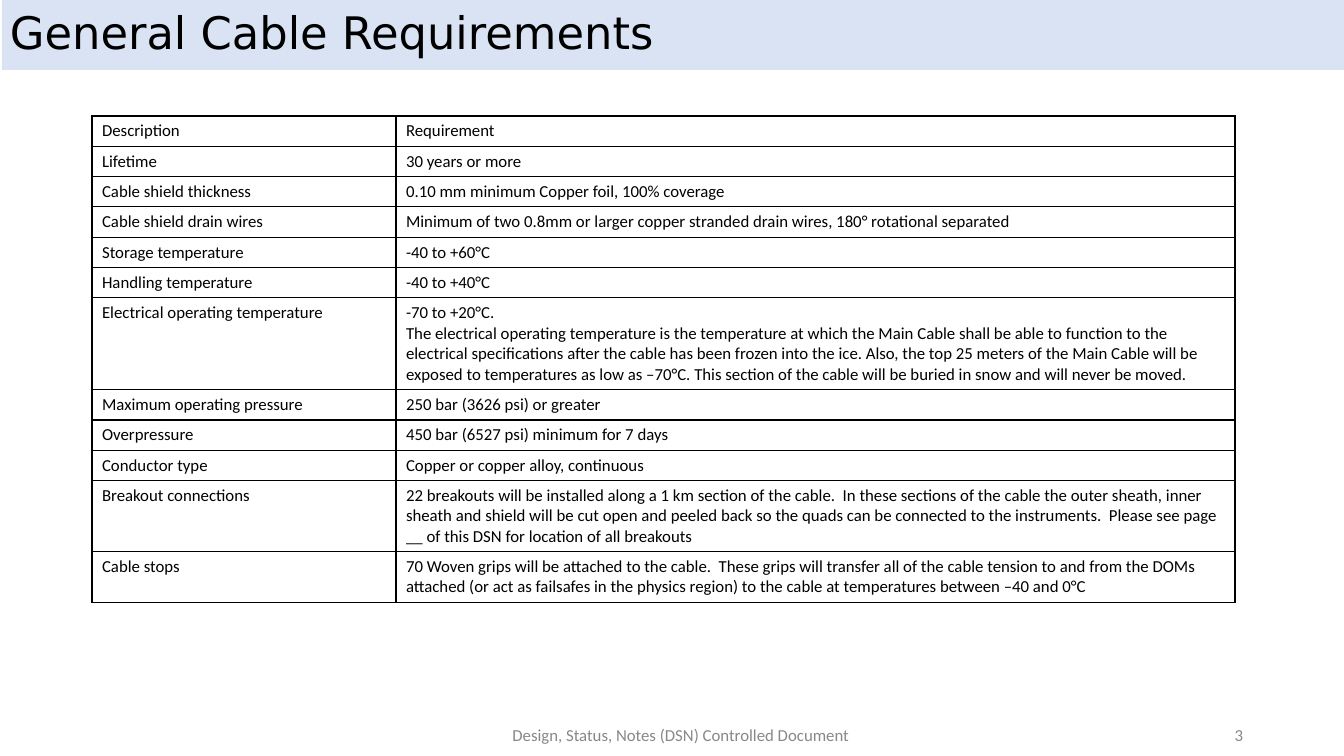
from pptx import Presentation
from pptx.dml.color import RGBColor
from pptx.enum.shapes import MSO_SHAPE as Shape
from pptx.enum.text import MSO_ANCHOR as Anchor, PP_ALIGN as Align
from pptx.oxml import parse_xml
from pptx.oxml.ns import nsdecls
from pptx.util import Pt

PX = 12192000 / 1344  # EMU per px
BLACK, GREY, BAND = "000000", "888888", "DAE3F3"


def px(*lengths):
    return [round(length * PX) for length in lengths]


def add_run(paragraph, text, size, font_name, color):
    run = paragraph.add_run()
    run.text = text
    run.font.size = Pt(size)
    run.font.name = font_name
    run.font.color.rgb = RGBColor.from_string(color)


presentation = Presentation()
presentation.slide_width, presentation.slide_height = px(1344, 756)
slide = presentation.slides.add_slide(presentation.slide_layouts[6])

# Title band
band = slide.shapes.add_shape(Shape.RECTANGLE, *px(2, 0, 1342, 70))
band.shadow.inherit = False
band.fill.solid()
band.fill.fore_color.rgb = RGBColor.from_string(BAND)
band.line.fill.background()

# Title, footer and page number
labels = [
    ((0, 0, 1033, 70), "General Cable Requirements", 32, "DejaVu Sans", BLACK, Align.LEFT, 0.9),
    ((454, 715, 454, 40), "Design, Status, Notes (DSN) Controlled Document", 12, "Calibri", GREY,
     Align.CENTER, 1.0),
    ((951, 715, 302, 40), "3", 12, "Calibri", GREY, Align.RIGHT, 1.0),
]
for box, text, size, font_name, color, alignment, spacing in labels:
    frame = slide.shapes.add_textbox(*px(*box)).text_frame
    frame.word_wrap = True
    frame.vertical_anchor = Anchor.MIDDLE
    paragraph = frame.paragraphs[0]
    paragraph.alignment = alignment
    paragraph.line_spacing = spacing
    add_run(paragraph, text, size, font_name, color)

# Requirements: description, paragraphs, row height in px
ONE_LINE = 30
requirements = [
    ("Description", ["Requirement"], ONE_LINE),
    ("Lifetime", ["30 years or more"], ONE_LINE),
    ("Cable shield thickness", ["0.10 mm minimum Copper foil, 100% coverage"], ONE_LINE),
    ("Cable shield drain wires",
     ["Minimum of two 0.8mm or larger copper stranded drain wires, 180° rotational separated"],
     ONE_LINE),
    ("Storage temperature", ["-40 to +60°C"], ONE_LINE),
    ("Handling temperature", ["-40 to +40°C"], ONE_LINE),
    ("Electrical operating temperature",
     ["-70 to +20°C.",
      "The electrical operating temperature is the temperature at which the Main Cable shall be "
      "able to function to the electrical specifications after the cable has been frozen into "
      "the ice. Also, the top 25 meters of the Main Cable will be exposed to temperatures as low "
      "as –70°C. This section of the cable will be buried in snow and will never be moved."],
     92),
    ("Maximum operating pressure", ["250 bar (3626 psi) or greater"], ONE_LINE),
    ("Overpressure", ["450 bar (6527 psi) minimum for 7 days"], ONE_LINE),
    ("Conductor type", ["Copper or copper alloy, continuous"], ONE_LINE),
    ("Breakout connections",
     ["22 breakouts will be installed along a 1 km section of the cable.  In these sections of "
      "the cable the outer sheath, inner sheath and shield will be cut open and peeled back so "
      "the quads can be connected to the instruments.  Please see page __ of this DSN for "
      "location of all breakouts"],
     71),
    ("Cable stops",
     ["70 Woven grips will be attached to the cable.  These grips will transfer all of the cable "
      "tension to and from the DOMs attached (or act as failsafes in the physics region) to the "
      "cable at temperatures between –40 and 0°C"],
     51),
]

# Requirements table
table_height = sum(height for _, _, height in requirements)
table = slide.shapes.add_table(len(requirements), 2, *px(92, 116, 1143, table_height)).table
table.first_row = False
table.horz_banding = False
for column, width in zip(table.columns, px(304, 839)):
    column.width = width

for row, (description, details, height) in zip(table.rows, requirements):
    row.height = px(height)[0]
    for cell, texts in zip(row.cells, ([description], details)):
        # Thin black border on every side
        properties = cell._tc.get_or_add_tcPr()
        for side in ("lnL", "lnR", "lnT", "lnB"):
            properties.append(parse_xml(
                f'<a:{side} {nsdecls("a")} w="12700"><a:solidFill>'
                f'<a:srgbClr val="{BLACK}"/></a:solidFill></a:{side}>'))
        cell.fill.background()
        frame = cell.text_frame
        for index, text in enumerate(texts):
            paragraph = frame.add_paragraph() if index else frame.paragraphs[0]
            add_run(paragraph, text, 12, "Calibri", BLACK)

presentation.save("out.pptx")
